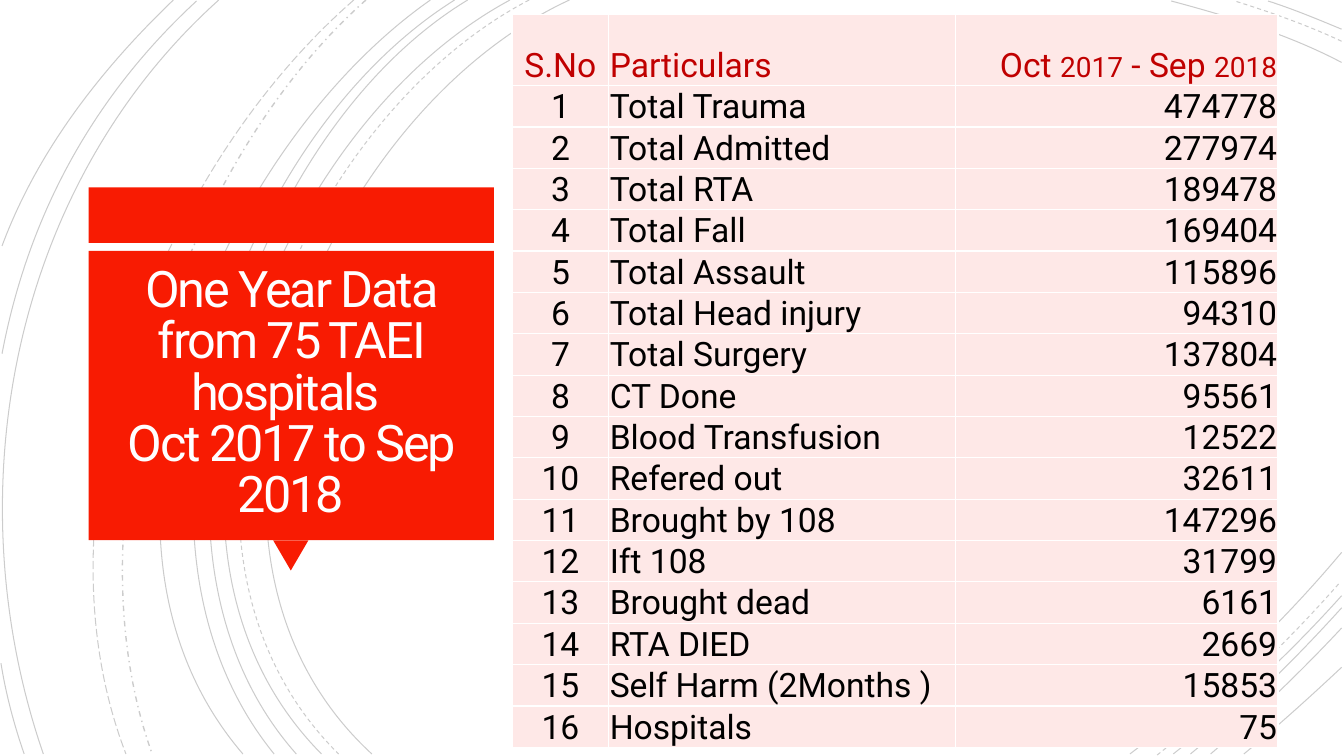
from lxml import etree
from pptx import Presentation
from pptx.dml.color import RGBColor
from pptx.enum.dml import MSO_LINE
from pptx.enum.shapes import MSO_SHAPE
from pptx.enum.text import MSO_ANCHOR, PP_ALIGN
from pptx.oxml import parse_xml
from pptx.oxml.ns import nsdecls, qn
from pptx.util import Inches, Pt

RED = RGBColor(0xF8, 0x1B, 0x02)
DARK_RED = RGBColor(0xC0, 0x00, 0x00)
PINK = RGBColor(0xFE, 0xE8, 0xE7)
OFF_WHITE = RGBColor(0xFF, 0xFE, 0xFF)
BLACK = RGBColor(0x00, 0x00, 0x00)
SOLID, DASH = MSO_LINE.SOLID, MSO_LINE.DASH
DASH_DOT, LONG_DASH = MSO_LINE.DASH_DOT, MSO_LINE.LONG_DASH
RECT, TRIANGLE = MSO_SHAPE.RECTANGLE, MSO_SHAPE.ISOSCELES_TRIANGLE
LEFT, CENTER, RIGHT = PP_ALIGN.LEFT, PP_ALIGN.CENTER, PP_ALIGN.RIGHT
MIDDLE, BOTTOM = MSO_ANCHOR.MIDDLE, MSO_ANCHOR.BOTTOM

COLUMNS, ROWS = 40, 22.5

ARCS = [
    (SOLID, 0.75, [(16.95, 0), (9.45, 3.45), (4.29, 16.2), (11.07, 22.44)]),
    (SOLID, 0.75, [(39.93, 1.86), (38.34, 1.02), (36.54, 0.48), (34.86, 0.03)]),
    (SOLID, 0.75, [(33.63, 22.44), (35.91, 20.7), (38.07, 18.66), (39.93, 16.44)]),
    (DASH, 0.75, [(15.75, 0), (8.55, 3.75), (3.69, 16.11), (10.08, 22.44)]),
    (DASH, 0.75, [(39.93, 1.23), (38.91, 0.75), (37.8, 0.36), (36.75, 0.03)]),
    (DASH, 0.75, [(34.44, 22.47), (36.39, 20.94), (38.25, 19.2), (39.9, 17.31)]),
    (SOLID, 0.75, [(15.18, 0), (8.1, 3.81), (3.3, 16.11), (9.57, 22.44)]),
    (SOLID, 0.75, [(39.93, 0.87), (39.21, 0.57), (38.49, 0.27), (37.74, 0.03)]),
    (SOLID, 0.75, [(34.92, 22.44), (36.69, 21.03), (38.4, 19.44), (39.93, 17.73)]),
    (SOLID, 0.75, [(13.92, 0), (7.32, 3.99), (3.3, 16.23), (8.82, 22.44)]),
    (SOLID, 0.75, [(35.43, 22.44), (37.02, 21.12), (38.52, 19.65), (39.93, 18.09)]),
    (SOLID, 0.75, [(13.53, 0), (6.93, 4.14), (2.91, 15.99), (8.16, 22.44)]),
    (SOLID, 0.75, [(36.03, 22.44), (37.38, 21.27), (38.7, 20.01), (39.93, 18.69)]),
    (SOLID, 0.75, [(12.81, 0), (6.51, 4.41), (1.59, 15.87), (7.23, 22.44)]),
    (SOLID, 0.75, [(37.02, 22.44), (38.01, 21.63), (38.97, 20.76), (39.93, 19.86)]),
    (DASH_DOT, 1, [(10.89, 0), (5.28, 4.98), (1.95, 15.27), (4.53, 22.44)]),
    (LONG_DASH, 0.75, [(10.53, 0), (4.71, 5.07), (0.87, 14.97), (3.75, 22.44)]),
    (SOLID, 0.75, [(6.51, 0), (0.33, 5.55), (-1.38, 14.7), (1.29, 22.44)]),
    (SOLID, 0.75, [(5.85, 0.03), (2.76, 2.88), (0.84, 6.42), (0.06, 10.53)]),
    (SOLID, 0.75, [(0.03, 19.74), (0.18, 20.67), (0.42, 21.57), (0.72, 22.44)]),
    (SOLID, 0.75, [(5.16, 0), (3, 2.07), (1.11, 4.5), (0.06, 7.32)]),
]

HEADER = [
    [("S.No", 24)],
    [("Particulars", 24)],
    [("Oct ", 24), ("2017", 20), (" - Sep ", 24), ("2018", 20)],
]
FIGURES = [
    ("Total Trauma", 474778), ("Total Admitted", 277974),
    ("Total RTA", 189478), ("Total Fall", 169404),
    ("Total Assault", 115896), ("Total Head injury", 94310),
    ("Total Surgery", 137804), ("CT Done", 95561),
    ("Blood Transfusion", 12522), ("Refered out", 32611),
    ("Brought by 108", 147296), ("Ift 108", 31799),
    ("Brought dead", 6161), ("RTA DIED", 2669),
    ("Self Harm (2Months )", 15853), ("Hospitals", 75),
]


class SlideBuilder:
    """Draws styled elements on one slide, measured in grid columns and rows."""

    def __init__(self, prs, font):
        self.slide = prs.slides.add_slide(prs.slide_layouts[6])
        self.shapes = self.slide.shapes
        self.font = font
        self.column = prs.slide_width / COLUMNS
        self.row = prs.slide_height / ROWS

    def x(self, columns):
        return round(columns * self.column)

    def y(self, rows):
        return round(rows * self.row)

    def box(self, left, top, width, height):
        return self.x(left), self.y(top), self.x(width), self.y(height)

    def arc(self, dash, weight, points):
        start, *rest = [(self.x(x), self.y(y)) for x, y in points]
        builder = self.shapes.build_freeform(*start)
        builder.add_line_segments(rest, close=False)
        s = builder.convert_to_shape()
        s.shadow.inherit = False
        s.fill.background()
        s.line.width = Pt(weight)
        s.line.dash_style = dash
        s.line.color.rgb = BLACK
        color = s.line.fill._xPr.find(".//" + qn("a:srgbClr"))
        etree.SubElement(color, qn("a:alpha")).set("val", "20000")
        segments = s._element.xpath(".//a:lnTo")
        curve = etree.SubElement(segments[0].getparent(), qn("a:cubicBezTo"))
        for segment in segments:
            curve.append(segment[0])
            segment.getparent().remove(segment)

    def block(self, kind, *box, rotation=0):
        s = self.shapes.add_shape(kind, *self.box(*box))
        s.shadow.inherit = False
        s.fill.solid()
        s.fill.fore_color.rgb = RED
        s.line.fill.background()
        s.rotation = rotation

    def run(self, p, text, size, color):
        r = p.add_run()
        r.text = text
        r.font.name = self.font
        r.font.size = Pt(size)
        r.font.color.rgb = color
        return r

    def title(self, lines, *box):
        tf = self.shapes.add_textbox(*self.box(*box)).text_frame
        tf.word_wrap = True
        tf.vertical_anchor = MIDDLE
        tf.margin_left = tf.margin_right = Inches(0.25)
        tf.margin_top = tf.margin_bottom = Inches(0.25)
        p = tf.paragraphs[0]
        p.alignment = CENTER
        p.line_spacing = 0.85
        for i, line in enumerate(lines):
            if i:
                p.add_line_break()
            r = self.run(p, line, 36, OFF_WHITE)
            r.font._element.set("spc", "-150")

    def cell(self, cell, runs, align, color):
        tc_pr = cell._tc.get_or_add_tcPr()
        for side in "LRTB":
            tc_pr.append(parse_xml(
                f'<a:ln{side} {nsdecls("a")} w="12700"><a:solidFill>'
                f'<a:srgbClr val="FFFFFF"/></a:solidFill></a:ln{side}>'))
        cell.fill.solid()
        cell.fill.fore_color.rgb = PINK
        cell.vertical_anchor = BOTTOM
        cell.margin_left = cell.margin_right = cell.margin_top = Inches(0.01)
        cell.margin_bottom = 0
        p = cell.text_frame.paragraphs[0]
        p.alignment = align
        for text, size in runs:
            self.run(p, text, size, color)

    def table(self, rows, left, top, widths, header_height, row_height):
        heights = [header_height] + [row_height] * (len(rows) - 1)
        box = self.box(left, top, sum(widths), sum(heights))
        table = self.shapes.add_table(len(rows), len(widths), *box).table
        table.horz_banding = False
        for column, width in zip(table.columns, widths):
            column.width = self.x(width)
        for i, (row, height) in enumerate(zip(rows, heights)):
            table.rows[i].height = self.y(height)
            color = BLACK if i else DARK_RED
            for j, align in enumerate((CENTER, LEFT, RIGHT)):
                self.cell(table.cell(i, j), row[j], align, color)


def main():
    prs = Presentation()
    prs.slide_width, prs.slide_height = Inches(13.33), Inches(7.5)
    page = SlideBuilder(prs, "Roboto")
    for arc in ARCS:
        page.arc(*arc)
    page.block(RECT, 2.64, 5.58, 12.06, 1.65)
    page.block(TRIANGLE, 8.13, 16.08, 1.05, 0.9, rotation=180)
    page.block(RECT, 2.64, 7.47, 12.06, 8.61)
    page.title(["One Year Data from 75 TAEI hospitals ", "Oct 2017 to Sep 2018"],
               2.91, 7.71, 11.49, 8.07)
    body = [[[(str(value), 24)] for value in (number, *figure)]
            for number, figure in enumerate(FIGURES, 1)]
    page.table([HEADER] + body, 15.24, 0.42, (2.88, 10.32, 9.6), 2.13, 1.2)
    prs.save("out.pptx")


if __name__ == "__main__":
    main()
